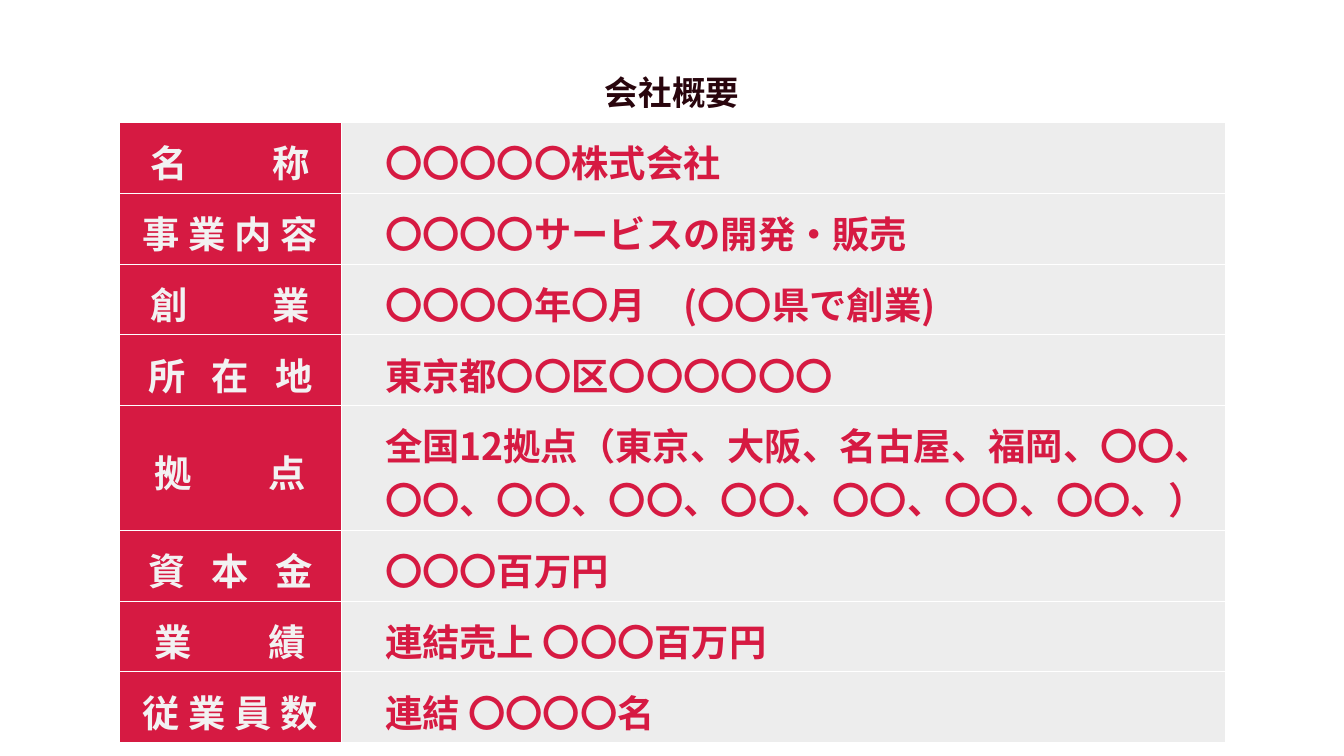
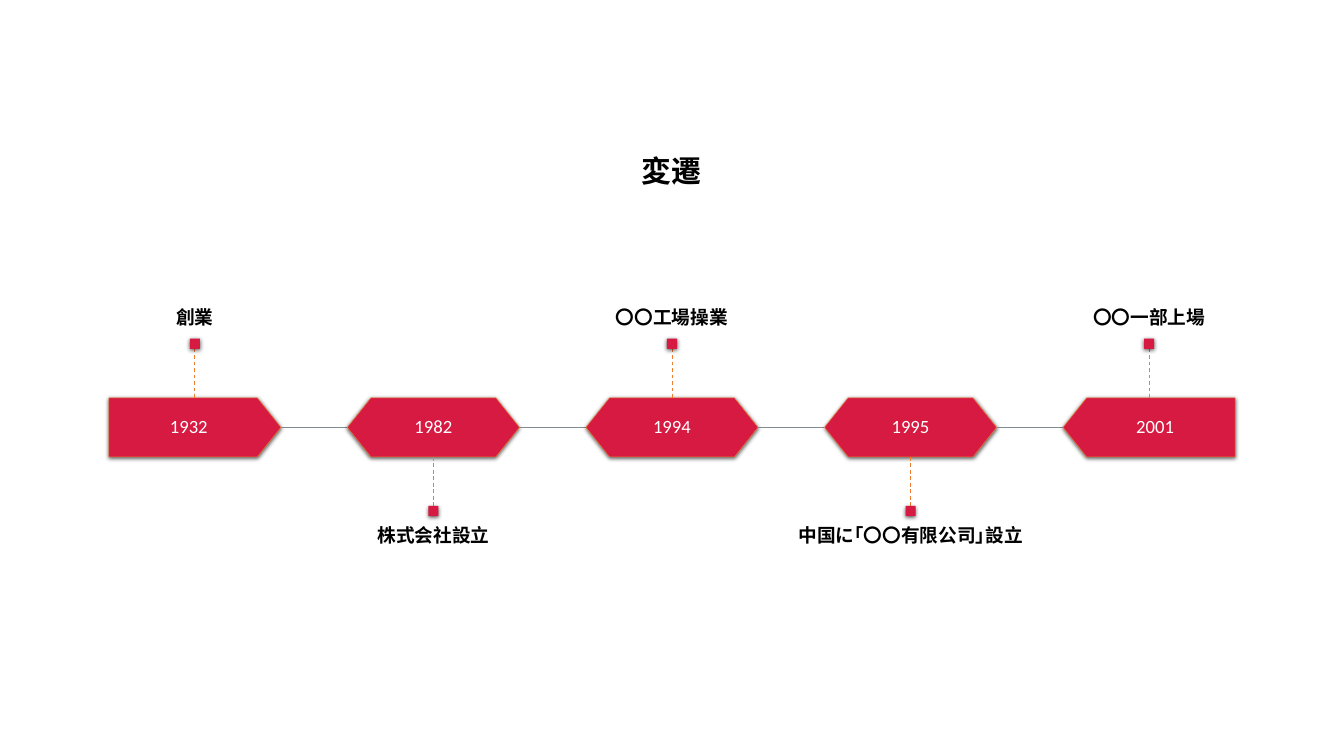
import pptx
import pptx.util
import pptx.dml.color
import pptx.enum.dml
import pptx.enum.shapes
import pptx.enum.text
import pptx.oxml.ns
from dataclasses import dataclass
from lxml import etree

Pt = pptx.util.Pt
qn = pptx.oxml.ns.qn
SHAPE = pptx.enum.shapes.MSO_SHAPE
ANCHOR = pptx.enum.text.MSO_ANCHOR
ALIGN = pptx.enum.text.PP_ALIGN


@dataclass(frozen=True)
class Theme:
    crimson: str = "D61A42"
    pale: str = "EDEDED"
    off_white: str = "F2F2F2"
    white: str = "FFFFFF"
    black: str = "000000"
    wine: str = "29050D"
    orange: str = "ED7D31"
    grey: str = "7F8C8D"
    japanese: str = "Noto Sans CJK JP"
    latin: str = "Calibri"
    table_size: int = 40
    overview_size: int = 36
    history_size: int = 32
    timeline_size: int = 20


THEME = Theme()

# Label, gap in points between its characters, and value
PROFILE = [
    ("名称", 91, "〇〇〇〇〇株式会社"),
    ("事 業 内 容", 0, "〇〇〇〇サービスの開発・販売"),
    ("創業", 91, "〇〇〇〇年〇月　(〇〇県で創業)"),
    ("所在地", 28, "東京都〇〇区〇〇〇〇〇〇"),
    ("拠点", 82, "全国12拠点（東京、大阪、名古屋、福岡、〇〇、"
                 "〇〇、〇〇、〇〇、〇〇、〇〇、〇〇、〇〇、）"),
    ("資本金", 28, "〇〇〇百万円"),
    ("業績", 82, "連結売上 〇〇〇百万円"),
    ("従 業 員 数", 0, "連結 〇〇〇〇名"),
]
ROW_HEIGHT, TALL_ROW_HEIGHT, TALL_ROW = 75, 120, 4

MILESTONES = [
    ("1932", "創業"),
    ("1982", "株式会社設立"),
    ("1994", "〇〇工場操業"),
    ("1995", "中国に｢〇〇有限公司｣設立"),
    ("2001", "〇〇一部上場"),
]
# Timeline geometry
FIRST_CENTRE, PITCH, AXIS = 208.8, 255.6, 457.9
STAGE_WIDTH, STAGE_HEIGHT = 184.4, 63.4
STEM, MARKER = 52.5, 10.8
LABEL_HEIGHT = 168.5


def rgb(value):
    return pptx.dml.color.RGBColor.from_string(value)


def style_run(run, size, color, font=THEME.japanese, bold=True):
    run.font.size, run.font.bold, run.font.name = Pt(size), bold, font
    run.font.color.rgb = rgb(color)
    east_asian = etree.SubElement(run.font._element, qn("a:ea"))
    east_asian.set("typeface", THEME.japanese)


def add_text(slide, box, text, size, color, insets, anchor=ANCHOR.MIDDLE,
             font=THEME.japanese, bold=True, line_spacing=None, space_after=None):
    frame = slide.shapes.add_textbox(*map(Pt, box)).text_frame
    frame.word_wrap = True
    frame.vertical_anchor = anchor
    (frame.margin_left, frame.margin_top,
     frame.margin_right, frame.margin_bottom) = map(Pt, insets)
    frame.text = text
    paragraph = frame.paragraphs[0]
    paragraph.alignment = ALIGN.CENTER
    paragraph.line_spacing = line_spacing
    paragraph.space_after = space_after
    style_run(paragraph.runs[0], size, color, font, bold)


def add_block(slide, preset, box, outlined=False):
    block = slide.shapes.add_shape(preset, *map(Pt, box))
    block.fill.solid()
    block.fill.fore_color.rgb = rgb(THEME.crimson)
    if outlined:
        block.line.color.rgb = rgb(THEME.orange)
        block.line.width = Pt(0.5)
    else:
        block.line.fill.background()
    # Soft shadow straight below
    block.shadow.inherit = False
    effects = block._element.spPr.find(qn("a:effectLst"))
    shadow = etree.SubElement(effects, qn("a:outerShdw"), blurRad=str(Pt(4.5)),
                              dist=str(Pt(1.5)), dir="5400000", rotWithShape="0")
    color = etree.SubElement(shadow, qn("a:srgbClr"), val=THEME.black)
    etree.SubElement(color, qn("a:alpha"), val="63000")
    return block


def add_line(slide, start, end, color, width, dashed=False):
    line = slide.shapes.add_connector(pptx.enum.shapes.MSO_CONNECTOR.STRAIGHT,
                                      *map(Pt, start + end))
    line.line.color.rgb = rgb(color)
    line.line.width = Pt(width)
    if dashed:
        line.line.dash_style = pptx.enum.dml.MSO_LINE.DASH
    etree.SubElement(line._element.spPr, qn("a:effectLst"))


def style_cell(cell, fill, left_inset):
    cell.fill.solid()
    cell.fill.fore_color.rgb = rgb(fill)
    cell.vertical_anchor = ANCHOR.MIDDLE
    cell.margin_left, cell.margin_right = Pt(left_inset), Pt(10.8)
    cell.margin_top, cell.margin_bottom = Pt(13), Pt(5)
    # Borders come before the fill
    properties = cell._tc.get_or_add_tcPr()
    for index, side in enumerate(("lnL", "lnR", "lnT", "lnB")):
        border = etree.Element(qn("a:" + side), w=str(Pt(1)))
        solid = etree.SubElement(border, qn("a:solidFill"))
        etree.SubElement(solid, qn("a:srgbClr"), val=THEME.white)
        properties.insert(index, border)


def fill_label(cell, label, gap):
    style_cell(cell, THEME.crimson, 10.8)
    paragraph = cell.text_frame.paragraphs[0]
    paragraph.alignment = ALIGN.CENTER
    # The last character has no gap after it, so the label stays centred
    paragraph.text = label[:-1]
    paragraph.add_run().text = label[-1]
    for run in paragraph.runs:
        style_run(run, THEME.table_size, THEME.off_white)
    if gap:
        paragraph.runs[0].font._element.set("spc", str(gap * 100))


def fill_value(cell, value):
    style_cell(cell, THEME.pale, 46.8)
    cell.text_frame.text = value
    style_run(cell.text_frame.paragraphs[0].runs[0], THEME.table_size, THEME.crimson)


def add_profile_table(slide):
    table = slide.shapes.add_table(len(PROFILE), 2, Pt(127.6), Pt(131.2),
                                   Pt(1185), Pt(643)).table
    table.first_row = table.horz_banding = False
    table.columns[0].width, table.columns[1].width = Pt(238.2), Pt(946.8)
    for index, (label, gap, value) in enumerate(PROFILE):
        table.rows[index].height = Pt(TALL_ROW_HEIGHT if index == TALL_ROW else ROW_HEIGHT)
        fill_label(table.cell(index, 0), label, gap)
        fill_value(table.cell(index, 1), value)


def add_stage(slide, index, year):
    centre = FIRST_CENTRE + index * PITCH
    left, top = centre - STAGE_WIDTH / 2, AXIS - STAGE_HEIGHT / 2
    last = len(MILESTONES) - 1
    at_end = index in (0, last)
    stage = add_block(slide, SHAPE.PENTAGON if at_end else SHAPE.HEXAGON,
                      (left, top, STAGE_WIDTH, STAGE_HEIGHT), outlined=True)
    stage.adjustments[0] = 0.4
    if index == last:
        stage.rotation = 180
    # The year sits on the flat part of the stage
    width, height = (171.4, STAGE_HEIGHT) if at_end else (137, 47)
    shift = {0: -6.5, last: 6.5}.get(index, 0)
    add_text(slide, (centre + shift - width / 2, AXIS - height / 2, width, height),
             year, THEME.timeline_size, THEME.white, (12, 12, 12, 12),
             font=THEME.latin, bold=False, line_spacing=0.9)
    if index < last:
        right = left + STAGE_WIDTH
        add_line(slide, (right, AXIS), (left + PITCH, AXIS), THEME.grey, 0.5)


def add_event(slide, index, event):
    centre = FIRST_CENTRE + index * PITCH
    above = index % 2 == 0
    side = -1 if above else 1
    edge = AXIS + side * STAGE_HEIGHT / 2
    tip = edge + side * STEM
    outer = tip + side * MARKER
    add_line(slide, (centre, min(edge, tip)), (centre, max(edge, tip)),
             THEME.orange, 1, dashed=True)
    add_block(slide, SHAPE.RECTANGLE,
              (centre - MARKER / 2, min(tip, outer), MARKER, MARKER))
    add_text(slide, (centre - PITCH / 2, outer - LABEL_HEIGHT if above else outer,
                     PITCH, LABEL_HEIGHT),
             event, THEME.timeline_size, THEME.black, (0, 13.7, 0, 13.7),
             anchor=ANCHOR.BOTTOM if above else ANCHOR.TOP,
             font=THEME.latin, line_spacing=0.9)


def build_overview(slide):
    add_profile_table(slide)
    add_text(slide, (600, 67.7, 240, 56), "会社概要", THEME.overview_size,
             THEME.wine, (7.2, 8.6, 7.2, 3.6))


def build_history(slide):
    for index, (year, event) in enumerate(MILESTONES):
        add_stage(slide, index, year)
        add_event(slide, index, event)
    add_text(slide, (658, 126.7, 124.6, 105.8), "変遷", THEME.history_size,
             THEME.black, (5.8, 14.4, 7.2, 3.6), line_spacing=0.9, space_after=Pt(6))


def main():
    deck = pptx.Presentation()
    deck.slide_width, deck.slide_height = Pt(1440), Pt(810)
    for build in (build_overview, build_history):
        build(deck.slides.add_slide(deck.slide_layouts[6]))
    deck.save("out.pptx")


if __name__ == "__main__":
    main()
